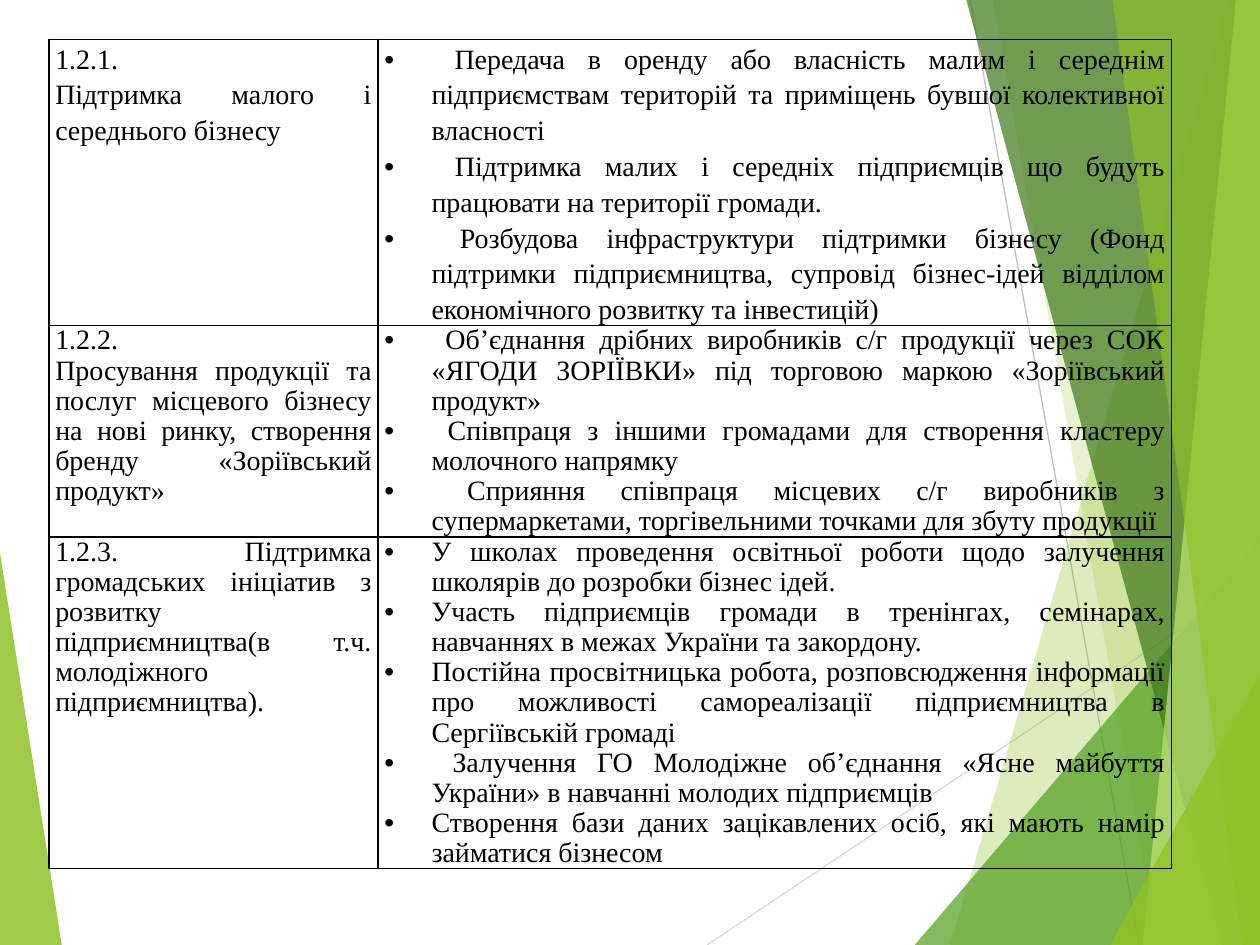
import pptx
import pptx.util
import pptx.dml.color
import pptx.enum.shapes
import pptx.enum.text
import pptx.oxml
import pptx.oxml.ns
from lxml import etree

Pt = pptx.util.Pt
qn = pptx.oxml.ns.qn
RGB = pptx.dml.color.RGBColor.from_string
HUES = {"lime": "90C226", "green": "54A021", "dark": "3F7819", "pale": "C0E474",
        "gray": "BFBFBF", "light": "D9D9D9", "ink": "000000"}

deck = pptx.Presentation()
deck.slide_width, deck.slide_height = Pt(720), Pt(540)
slide = deck.slides.add_slide(deck.slide_layouts[6])


def facet(points, hue, alpha):
    """Draw one translucent polygon."""
    pen = slide.shapes.build_freeform(Pt(points[0][0]), Pt(points[0][1]), scale=1.0)
    pen.add_line_segments([(Pt(x), Pt(y)) for x, y in points[1:]], close=True)
    shape = pen.convert_to_shape()
    shape.shadow.inherit = False
    shape.line.fill.background()
    shape.fill.solid()
    shape.fill.fore_color.rgb = RGB(HUES[hue])
    tint = shape.fill._xPr.find(".//" + qn("a:srgbClr"))
    etree.SubElement(tint, qn("a:alpha"), val=str(alpha * 1000))


def write(para, text, size=16, font="Times New Roman", hue="ink", space=0.97, bullet=False):
    """Fill a justified paragraph, with a hanging bullet if asked."""
    para.alignment = pptx.enum.text.PP_ALIGN.JUSTIFY
    para.line_spacing = space
    run = para.add_run()
    run.text = text
    run.font.size, run.font.name = Pt(size), font
    run.font.color.rgb = RGB(HUES[hue])
    if bullet:
        props = para._p.get_or_add_pPr()
        props.set("marL", str(Pt(27)))
        props.set("indent", str(-Pt(27)))
        etree.SubElement(props, qn("a:buFont"), typeface="Arial")
        etree.SubElement(props, qn("a:buChar"), char="•")


# Left wedge
facet([(0, 316), (35.3, 540), (0, 540)], "lime", 85)

# Thin lines behind the right side
for x1, y1, x2, y2, hue in [(404, 540, 720, 329, "light"), (554.4, 0, 650.9, 540, "gray")]:
    line = slide.shapes.add_connector(
        pptx.enum.shapes.MSO_CONNECTOR.STRAIGHT, Pt(x1), Pt(y1), Pt(x2), Pt(y2))
    line.line.color.rgb = RGB(HUES[hue])
    line.line.width = Pt(0.75)
    etree.SubElement(line._element.spPr, qn("a:effectLst"))

# Right facets: top x, bottom x, hue, opacity; all reach the right edge
for top, low, hue, alpha, start in [
        (702, 543, "lime", 30, 0), (567.4, 661.7, "lime", 20, 0),
        (720, 522.7, "green", 72, 309), (552.2, 698.4, "dark", 70, 0),
        (706.3, 653, "pale", 70, 0), (635.8, 710, "lime", 65, 0),
        (720, 634.3, "lime", 80, 385.2)]:
    edge = [(720, 540)] if top == 720 else [(720, 540), (720, 0)]
    facet([(top, start), (low, 540)] + edge, hue, alpha)

# Table: line spacing, left paragraphs, right bullets
rows = [
    (1.15, ["1.2.1.", "Підтримка малого і середнього бізнесу"], [
        " Передача в оренду або власність малим і середнім підприємствам територій та приміщень бувшої колективної власності",
        " Підтримка малих і середніх підприємців що будуть працювати на території громади.",
        " Розбудова інфраструктури підтримки бізнесу (Фонд підтримки підприємництва, супровід бізнес-ідей відділом економічного розвитку та інвестицій)"]),
    (0.97, ["1.2.2.", "Просування продукції та послуг місцевого бізнесу на нові ринку, створення бренду «Зоріївський продукт»"], [
        " Об’єднання дрібних виробників с/г продукції через СОК «ЯГОДИ ЗОРІЇВКИ» під торговою маркою «Зоріївський продукт»",
        " Співпраця з іншими громадами для створення кластеру молочного напрямку",
        " Сприяння співпраця місцевих с/г виробників з супермаркетами, торгівельними точками для збуту продукції"]),
    (0.97, ["1.2.3. Підтримка громадських ініціатив з розвитку підприємництва(в т.ч. молодіжного підприємництва)."], [
        "У школах проведення освітньої роботи щодо залучення школярів до розробки бізнес ідей.",
        "Участь підприємців громади в тренінгах, семінарах, навчаннях в межах України та закордону.",
        "Постійна просвітницька робота, розповсюдження інформації про можливості самореалізації підприємництва в Сергіївській громаді",
        " Залучення ГО Молодіжне об’єднання «Ясне майбуття України» в навчанні молодих підприємців",
        "Створення бази даних зацікавлених осіб, які мають намір займатися бізнесом"]),
]
table = slide.shapes.add_table(3, 2, Pt(28), Pt(22.6), Pt(641.5), Pt(471)).table
table.first_row = table.horz_banding = False
for col, width in zip(table.columns, [188, 453.5]):
    col.width = Pt(width)
for row, height in zip(table.rows, [162, 120, 189]):
    row.height = Pt(height)

for r, (space, *sides) in enumerate(rows):
    for c, texts in enumerate(sides):
        cell = table.cell(r, c)
        cell.margin_left = cell.margin_right = Pt(3.6)
        cell.margin_top = cell.margin_bottom = 0
        cell.fill.background()
        for i, text in enumerate(texts):
            para = cell.text_frame.paragraphs[0] if i == 0 else cell.text_frame.add_paragraph()
            write(para, text, space=space, bullet=c == 1)
        # Borders come before the fill
        props = cell._tc.get_or_add_tcPr()
        for i, side in enumerate("LRTB"):
            rim = etree.Element(qn("a:ln" + side), w=str(Pt(1)))
            paint = etree.SubElement(rim, qn("a:solidFill"))
            etree.SubElement(paint, qn("a:srgbClr"), val=HUES["ink"])
            props.insert(i, rim)

deck.save("out.pptx")
